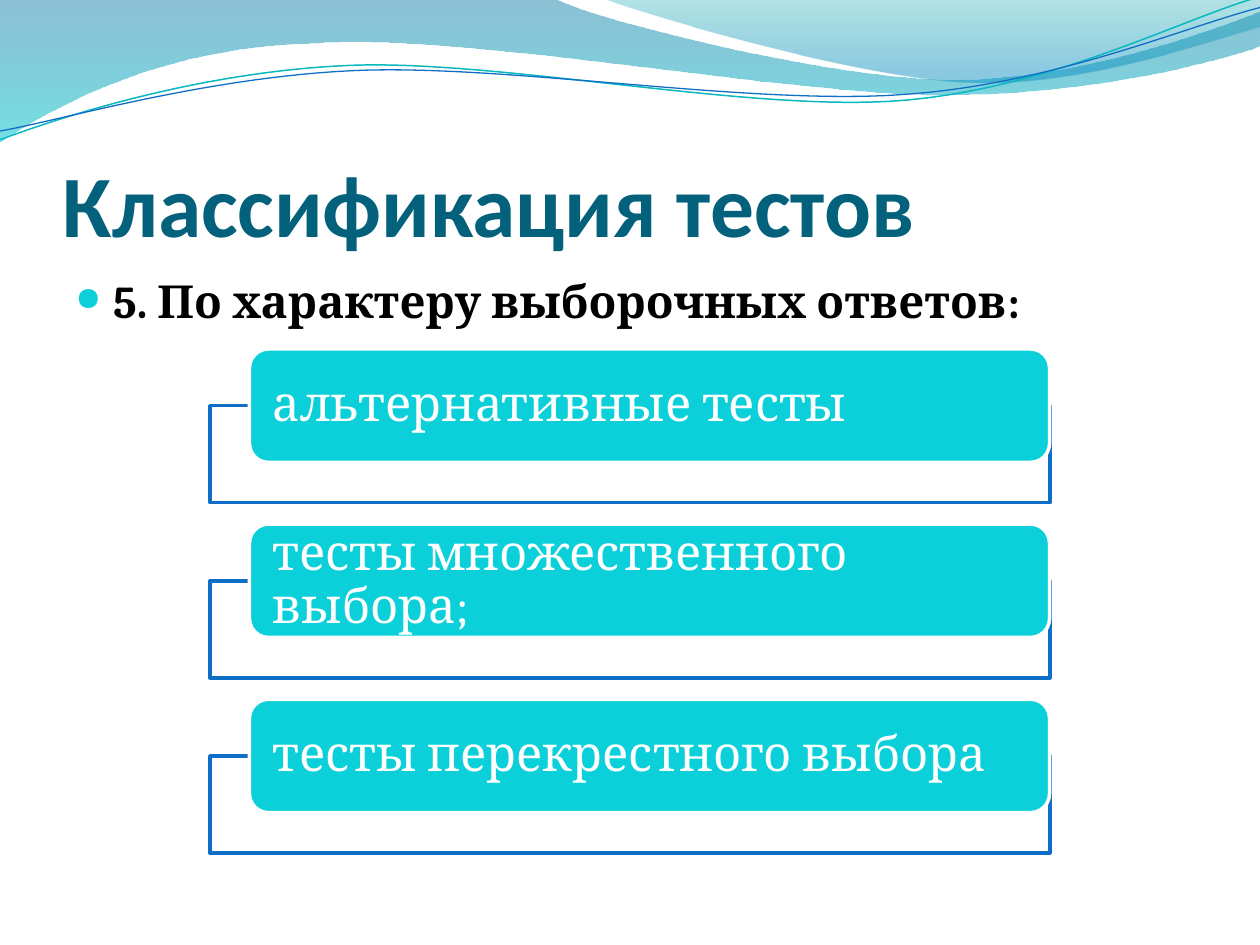
import pptx
import pptx.util
import pptx.dml.color
import pptx.enum.shapes
import pptx.enum.text
import pptx.oxml.ns
from lxml import etree

# Content
TITLE = "Классификация тестов"
SUBTITLE = "5. По характеру выборочных ответов:"
TEST_TYPES = ["альтернативные тесты", "тесты множественного выбора;",
              "тесты перекрестного выбора"]

THEME = {
    "title": "04617B", "body": "000000", "light": "FFFFFF",
    "accent": "0BD0D9", "frame": "0F6FC6",
    "title_font": "Calibri", "body_font": "Cambria",
    "title_size": 50, "subtitle_size": 26, "item_size": 28,
}

# Waves, in inches: a step of one point is a straight edge,
# a step of three points is a Bezier curve
WAVES = [
    dict(start=(0, 0), steps=[
        [(4.4, -0.01)],
        [(4.76, 0.17), (6.64, 0.63), (7.58, 0.63)],
        [(8.53, 0.63), (9.58, 0.26), (10, 0.09)],
        [(10.01, 0.36)],
        [(9.83, 0.44), (8.7, 0.76), (7.46, 0.75)],
        [(6.22, 0.75), (3.82, 0.28), (2.57, 0.34)],
        [(1.29, 0.36), (0.46, 0.83), (-0.01, 1.13)]],
        stops=[(0, "0074A1", 45), (1, "00C6CF", 55)]),
    dict(start=(4.79, -0.01), steps=[
        [(5.09, 0.11), (6.82, 0.62), (7.69, 0.65)],
        [(8.56, 0.69), (9.61, 0.32), (10, 0.21)],
        [(10, 0)]],
        stops=[(0, "00A1A9", 30), (0.8, "008BBF", 45)]),
    dict(start=(0, 1.11), steps=[
        [(0.48, 0.93), (1.58, 0.57), (2.77, 0.52)],
        [(3.95, 0.47), (5.93, 0.89), (7.13, 0.8)],
        [(8.33, 0.71), (9.38, 0.15), (9.98, -0.02)]],
        line=("0AB8BF", 0.85)),
    dict(start=(0, 1.04), steps=[
        [(0.47, 0.96), (1.64, 0.61), (2.83, 0.56)],
        [(4.03, 0.51), (5.97, 0.84), (7.17, 0.75)],
        [(8.36, 0.67), (9.41, 0.21), (10, 0.06)]],
        line=("0F6FC6", 0.75)),
]

# Layout, in inches
WIDTH, HEIGHT = 10, 7.5
MARGIN = 0.05 * WIDTH
FRAME_LEFT, FRAME_WIDTH, FRAME_HEIGHT = WIDTH / 6, WIDTH * 2 / 3, 0.77
FIRST_TOP, PITCH = 2.77, 1.39
LABEL_LEFT, LABEL_WIDTH, LABEL_HEIGHT = 1.98, 6.35, 0.9
FRAME_DROP = LABEL_HEIGHT / 2

Inches, Pt = pptx.util.Inches, pptx.util.Pt
ANCHOR = pptx.enum.text.MSO_ANCHOR
SHAPE = pptx.enum.shapes.MSO_SHAPE
qn = pptx.oxml.ns.qn


def rgb(code):
    return pptx.dml.color.RGBColor.from_string(code)


def add_xml(parent, tag, **attributes):
    return etree.SubElement(parent, qn(tag), attributes)


def set_alphas(shape, percents):
    """Set the opacity of the fill colours, in order."""
    colors = list(shape._element.spPr.iter(qn("a:srgbClr")))
    for color, percent in zip(colors, percents):
        add_xml(color, "a:alpha", val=str(percent * 1000))


def write(shape, text, *, font, size, color, bold=False, anchor=ANCHOR.TOP,
          insets=(0.1, 0.05, 0.1, 0.05), spacing=None, before=None, bullet=None):
    frame = shape.text_frame
    frame.word_wrap = True
    frame.vertical_anchor = anchor
    (frame.margin_left, frame.margin_top,
     frame.margin_right, frame.margin_bottom) = map(Inches, insets)
    paragraph = frame.paragraphs[0]
    paragraph.alignment = pptx.enum.text.PP_ALIGN.LEFT
    if spacing:
        paragraph.line_spacing = spacing
    if before:
        paragraph.space_before = Pt(before)
    if bullet:
        props = paragraph._p.get_or_add_pPr()
        indent = Inches(0.3)
        props.set("marL", str(indent))
        props.set("indent", str(-indent))
        add_xml(add_xml(props, "a:buClr"), "a:srgbClr", val=bullet)
        add_xml(props, "a:buSzPct", val="72000")
        add_xml(props, "a:buChar", char="●")
    run = paragraph.add_run()
    run.text = text
    run.font.name, run.font.size, run.font.bold = font, Pt(size), bold
    run.font.color.rgb = rgb(color)


def outline(shape, color, width):
    shape.line.color.rgb = rgb(color)
    shape.line.width = Pt(width)


def add_box(slide, kind, box, fill, line):
    shape = slide.shapes.add_shape(kind, *map(Inches, box))
    shape.shadow.inherit = False
    shape.fill.solid()
    shape.fill.fore_color.rgb = rgb(fill)
    outline(shape, line, 2)
    return shape


def bend(wave, steps):
    """Join the segments of each three-point step into one curve."""
    segments = iter(list(wave._element.spPr.iter(qn("a:lnTo"))))
    for step in steps:
        first, *others = [next(segments) for _ in step]
        if others:
            first.tag = qn("a:cubicBezTo")
        for other in others:
            first.append(other[0])
            other.getparent().remove(other)


def add_wave(slide, start, steps, stops=None, line=None):
    def emu(point):
        return tuple(map(Inches, point))

    builder = slide.shapes.build_freeform(*emu(start), scale=1.0)
    builder.add_line_segments([emu(point) for step in steps for point in step],
                              close=bool(stops))
    wave = builder.convert_to_shape()
    bend(wave, steps)
    wave.shadow.inherit = False
    if line:
        wave.fill.background()
        outline(wave, *line)
        return
    wave.line.fill.background()
    wave.fill.gradient()
    wave.fill.gradient_angle = 270  # top to bottom
    for stop, (position, color, _) in zip(wave.fill.gradient_stops, stops):
        stop.position = position
        stop.color.rgb = rgb(color)
    set_alphas(wave, [alpha for _, _, alpha in stops])


def main():
    deck = pptx.Presentation()
    deck.slide_width, deck.slide_height = Inches(WIDTH), Inches(HEIGHT)
    slide = deck.slides.add_slide(deck.slide_layouts[6])

    # Wave decoration
    for wave in WAVES:
        add_wave(slide, **wave)

    # Title and subtitle
    def text_box(top, height):
        return slide.shapes.add_textbox(*map(
            Inches, (MARGIN, top, WIDTH - 2 * MARGIN, height)))

    write(text_box(0.77, 1.25), TITLE, font=THEME["title_font"],
          size=THEME["title_size"], color=THEME["title"], bold=True,
          anchor=ANCHOR.BOTTOM, insets=(0, 0.05, 0, 0))
    write(text_box(2.12, 4.8), SUBTITLE, font=THEME["body_font"],
          size=THEME["subtitle_size"], color=THEME["body"], bold=True,
          before=5.2, bullet=THEME["accent"])

    # Test types: a label over an outlined frame, at an equal pitch
    for row, test_type in enumerate(TEST_TYPES):
        top = FIRST_TOP + row * PITCH
        frame = add_box(slide, SHAPE.RECTANGLE,
                        (FRAME_LEFT, top + FRAME_DROP, FRAME_WIDTH, FRAME_HEIGHT),
                        THEME["light"], THEME["frame"])
        set_alphas(frame, [90])
        label = add_box(slide, SHAPE.ROUNDED_RECTANGLE,
                        (LABEL_LEFT, top, LABEL_WIDTH, LABEL_HEIGHT),
                        THEME["accent"], THEME["light"])
        write(label, test_type, font=THEME["body_font"],
              size=THEME["item_size"], color=THEME["light"],
              anchor=ANCHOR.MIDDLE, insets=(0.14, 0, 0.14, 0), spacing=0.9)

    deck.save("out.pptx")


if __name__ == "__main__":
    main()
